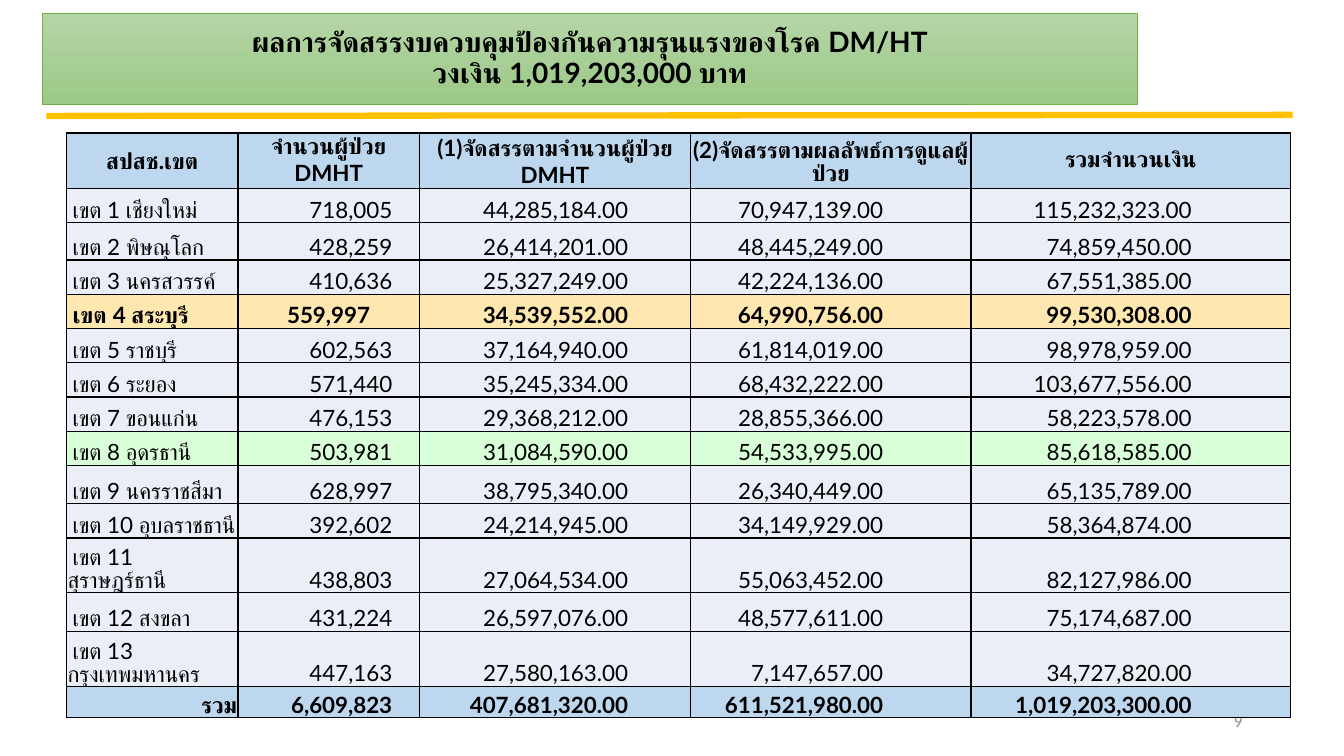
import pptx
import pptx.dml.color
import pptx.enum.shapes
import pptx.enum.text
import pptx.oxml
import pptx.oxml.ns
import pptx.util

Inches = pptx.util.Inches
Pt = pptx.util.Pt
ALIGN = pptx.enum.text.PP_ALIGN
ANCHOR = pptx.enum.text.MSO_ANCHOR

COLORS = {
    "text": "000000", "page": "8C8C8C", "rule": "FFC000",
    "light": "B5D5A7", "dark": "9CC987", "edge": "70AD47",
    "head": "BDD7EE", "plain": "EAEFF7", "gold": "FFE8AF", "mint": "D9FFD9",
}
WIDTHS = [1.7, 1.8, 2.69, 2.78, 3.17]
HEIGHTS = [0.55, 0.34, 0.37, 0.34, 0.34, 0.34, 0.34, 0.34,
           0.34, 0.38, 0.34, 0.5, 0.38, 0.55, 0.31]
PADS = [0.01, 0.27, 0.62, 0.87, 0.98]
HEADS = ["สปสช.เขต", "จำนวนผู้ป่วย\vDMHT", "(1)จัดสรรตามจำนวนผู้ป่วย DMHT",
         "(2)จัดสรรตามผลลัพธ์การดูแลผู้ป่วย", "รวมจำนวนเงิน"]
ZONES = [
    ("เขต 1 เชียงใหม่", 718005, 44285184, 70947139, 115232323),
    ("เขต 2 พิษณุโลก", 428259, 26414201, 48445249, 74859450),
    ("เขต 3 นครสวรรค์", 410636, 25327249, 42224136, 67551385),
    ("เขต 4 สระบุรี", 559997, 34539552, 64990756, 99530308),
    ("เขต 5 ราชบุรี", 602563, 37164940, 61814019, 98978959),
    ("เขต 6 ระยอง", 571440, 35245334, 68432222, 103677556),
    ("เขต 7 ขอนแก่น", 476153, 29368212, 28855366, 58223578),
    ("เขต 8 อุดรธานี", 503981, 31084590, 54533995, 85618585),
    ("เขต 9 นครราชสีมา", 628997, 38795340, 26340449, 65135789),
    ("เขต 10 อุบลราชธานี", 392602, 24214945, 34149929, 58364874),
    ("เขต 11 สุราษฎร์ธานี", 438803, 27064534, 55063452, 82127986),
    ("เขต 12 สงขลา", 431224, 26597076, 48577611, 75174687),
    ("เขต 13 กรุงเทพมหานคร", 447163, 27580163, 7147657, 34727820),
    ("รวม", 6609823, 407681320, 611521980, 1019203300),
]
TOTAL = len(ZONES)
FILLS = {0: "head", 4: "gold", 8: "mint", TOTAL: "head"}


def color(name):
    return pptx.dml.color.RGBColor.from_string(COLORS[name])


def write(frame, text, size, align, bold=False, font="Lato", tint="text"):
    frame.text = text
    para = frame.paragraphs[0]
    para.alignment = align
    for run in para.runs:
        style = {"name": font, "size": Pt(size), "bold": bold}
        for key, value in style.items():
            setattr(run.font, key, value)
        run.font.color.rgb = color(tint)
    return para


def border(cell):
    props = cell._tc.get_or_add_tcPr()
    space = pptx.oxml.ns.nsdecls("a")
    for spot, side in enumerate(("lnL", "lnR", "lnT", "lnB")):
        props.insert(spot, pptx.oxml.parse_xml(
            f'<a:{side} {space} w="12700"><a:solidFill>'
            f'<a:srgbClr val="{COLORS["text"]}"/></a:solidFill></a:{side}>'))


def banner(slide, left, top, width, height):
    title = slide.shapes.title
    place = {"left": left, "top": top, "width": width, "height": height}
    for key, value in place.items():
        setattr(title, key, Inches(value))
    title.fill.gradient()
    title.fill.gradient_angle = 270
    for stop, name in zip(title.fill.gradient_stops, ("light", "dark")):
        stop.color.rgb = color(name)
    title.line.color.rgb = color("edge")
    title.line.width = Pt(0.5)
    frame = title.text_frame
    frame.word_wrap = True
    frame.auto_size = pptx.enum.text.MSO_AUTO_SIZE.NONE
    frame.vertical_anchor = ANCHOR.MIDDLE
    para = write(frame, "ผลการจัดสรรงบควบคุมป้องกันความรุนแรงของโรค DM/HT\v"
                 "วงเงิน 1,019,203,000 บาท", 20, ALIGN.CENTER, True)
    para.line_spacing = 0.9


def rule(slide, left, top, right, end):
    line = slide.shapes.add_connector(
        pptx.enum.shapes.MSO_CONNECTOR.STRAIGHT,
        Inches(left), Inches(top), Inches(right), Inches(end))
    line.line.color.rgb = color("rule")
    line.line.width = Pt(4.5)
    props = line._element.spPr
    props.append(props.makeelement(pptx.oxml.ns.qn("a:effectLst"), {}))


def show(value, col):
    """Format a patient count whole and a sum of money with two decimals."""
    if col == 0:
        return value
    return f"{value:,}" if col == 1 else f"{value:,.2f}"


def fill(cell, row, col):
    """Write and format one table cell."""
    head, total = row == 0, row == TOTAL
    pad = PADS[col]
    if row == 4 and col == 1:
        pad = 0.49
    margins = {"margin_left": 0.01, "margin_top": 0.01, "margin_bottom": 0,
               "margin_right": 0.01 if head else pad}
    for key, value in margins.items():
        setattr(cell, key, Inches(value))
    cell.vertical_anchor = ANCHOR.MIDDLE if head else ANCHOR.BOTTOM
    cell.fill.solid()
    cell.fill.fore_color.rgb = color(FILLS.get(row, "plain"))
    border(cell)
    zone = col == 0 and not head and not total
    align = ALIGN.CENTER if head else ALIGN.LEFT if zone else ALIGN.RIGHT
    text = HEADS[col] if head else show(ZONES[row - 1][col], col)
    para = write(cell.text_frame, text, 16, align, row in (0, 4, TOTAL))
    if zone:
        props = para._p.get_or_add_pPr()
        props.set("marL", "0")
        props.set("indent", str(Inches(0.05)))


def budget(slide, left, top):
    frame = slide.shapes.add_table(
        len(HEIGHTS), len(WIDTHS), Inches(left), Inches(top),
        Inches(sum(WIDTHS)), Inches(sum(HEIGHTS)))
    table = frame.table
    table.first_row = table.horz_banding = False
    for col, width in enumerate(WIDTHS):
        table.columns[col].width = Inches(width)
    for row, height in enumerate(HEIGHTS):
        table.rows[row].height = Inches(height)
        for col in range(len(WIDTHS)):
            fill(table.cell(row, col), row, col)


def number(slide, left, top, width, height):
    box = slide.shapes.add_textbox(
        Inches(left), Inches(top), Inches(width), Inches(height))
    box.text_frame.word_wrap = True
    box.text_frame.vertical_anchor = ANCHOR.MIDDLE
    write(box.text_frame, "9", 12, ALIGN.RIGHT, font="Calibri", tint="page")


def main():
    deck = pptx.Presentation()
    deck.slide_width = Inches(13.33)
    deck.slide_height = Inches(7.5)
    slide = deck.slides.add_slide(deck.slide_layouts[5])
    rule(slide, 0.46, 1.15, 12.82, 1.14)
    number(slide, 9.42, 6.95, 3, 0.4)
    banner(slide, 0.42, 0.13, 10.86, 0.91)
    budget(slide, 0.66, 1.32)
    deck.save("out.pptx")


if __name__ == "__main__":
    main()
